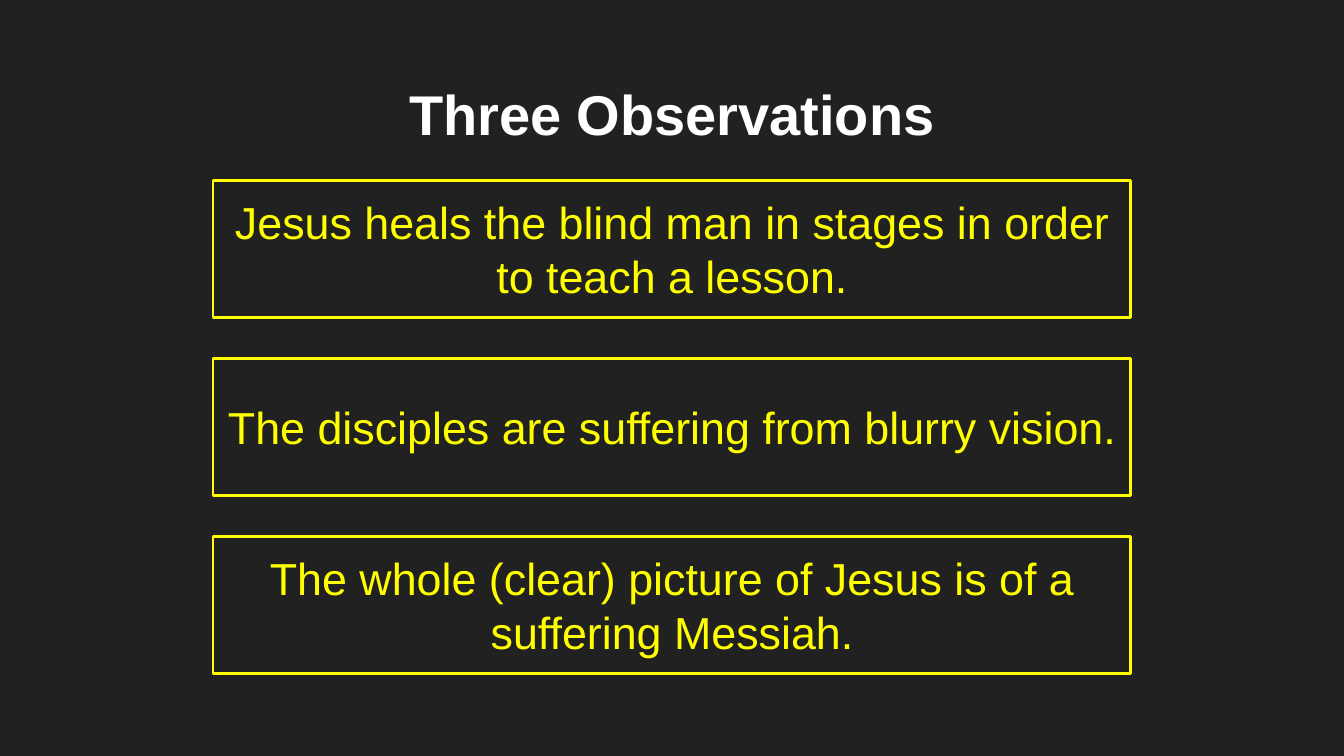
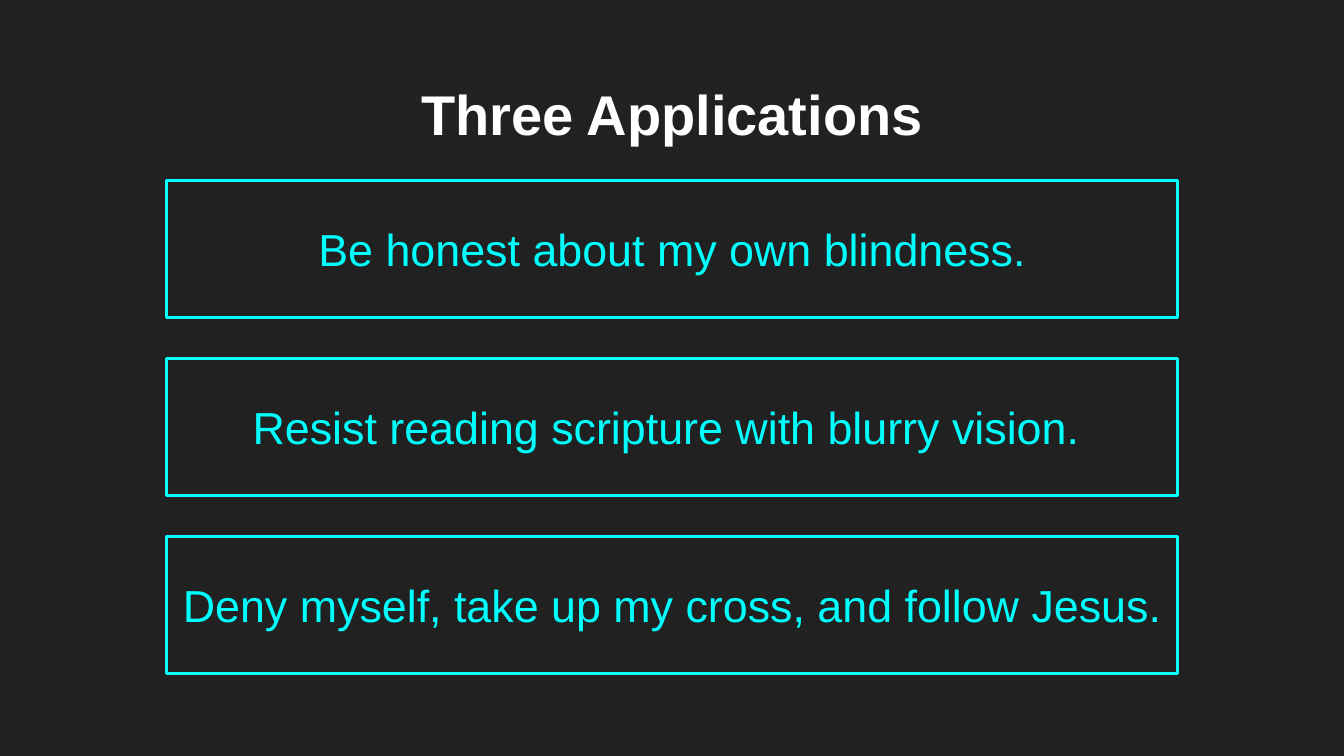
from pptx import Presentation
from pptx.dml.color import RGBColor
from pptx.enum import shapes, text
from pptx.util import Inches, Pt

COLOURS = {
    "background": "212121",
    "title": "FFFFFF",
    "observation": "FFFF00",
    "application": "00FFFF",
}
FONT = "Arial"
SLIDE_WIDTH = 10
SLIDE_HEIGHT = SLIDE_WIDTH * 9 / 16
FIRST_TOP, LAST_TOP, BOX_HEIGHT = 1.34, 3.99, 1.02

OBSERVATIONS = [
    "Jesus heals the blind man in stages in order to teach a lesson.",
    "The disciples are suffering from blurry vision.",
    "The whole (clear) picture of Jesus is of a suffering Messiah.",
]
APPLICATIONS = [
    "Be honest about my own blindness.",
    "Resist reading scripture with blurry vision. ",
    "Deny myself, take up my cross, and follow Jesus.",
]


def colour(name):
    return RGBColor.from_string(COLOURS[name])


def write_text(shape, wording, size, colour_name, anchor, bold=False):
    frame = shape.text_frame
    frame.word_wrap = True
    frame.auto_size = text.MSO_AUTO_SIZE.NONE
    frame.vertical_anchor = anchor
    frame.margin_left = frame.margin_right = Inches(0.1)
    frame.margin_top = frame.margin_bottom = Inches(0.1)
    para = frame.paragraphs[0]
    para.text = wording
    para.alignment = text.PP_ALIGN.CENTER
    para.font.name = FONT
    para.font.size = Pt(size)
    para.font.bold = bold
    para.font.color.rgb = colour(colour_name)


def add_title(page, wording):
    title = page.shapes.title
    title.left, title.top = Inches(0.34), Inches(0.49)
    title.width, title.height = Inches(9.32), Inches(0.63)
    write_text(title, wording, 30, "title", text.MSO_ANCHOR.TOP, bold=True)


def add_point(page, wording, top, width, colour_name):
    box = page.shapes.add_shape(
        shapes.MSO_SHAPE.RECTANGLE,
        Inches((SLIDE_WIDTH - width) / 2), Inches(top),
        Inches(width), Inches(BOX_HEIGHT),
    )
    box.shadow.inherit = False
    box.fill.background()
    box.line.color.rgb = colour(colour_name)
    box.line.width = Pt(1.5)
    write_text(box, wording, 24, colour_name, text.MSO_ANCHOR.MIDDLE)


def add_points_page(deck, title, points, width, colour_name):
    page = deck.slides.add_slide(deck.slide_layouts.get_by_name("Title Only"))
    add_title(page, title)
    pitch = (LAST_TOP - FIRST_TOP) / (len(points) - 1)
    for row, wording in enumerate(points):
        add_point(page, wording, FIRST_TOP + row * pitch, width, colour_name)


def main():
    deck = Presentation()
    deck.slide_width = Inches(SLIDE_WIDTH)
    deck.slide_height = Inches(SLIDE_HEIGHT)

    # Shared dark background
    fill = deck.slide_master.background.fill
    fill.solid()
    fill.fore_color.rgb = colour("background")

    # One page for each set of points
    add_points_page(deck, "Three Observations", OBSERVATIONS, 6.83, "observation")
    add_points_page(deck, "Three Applications", APPLICATIONS, 7.52, "application")
    deck.save("out.pptx")


if __name__ == "__main__":
    main()
